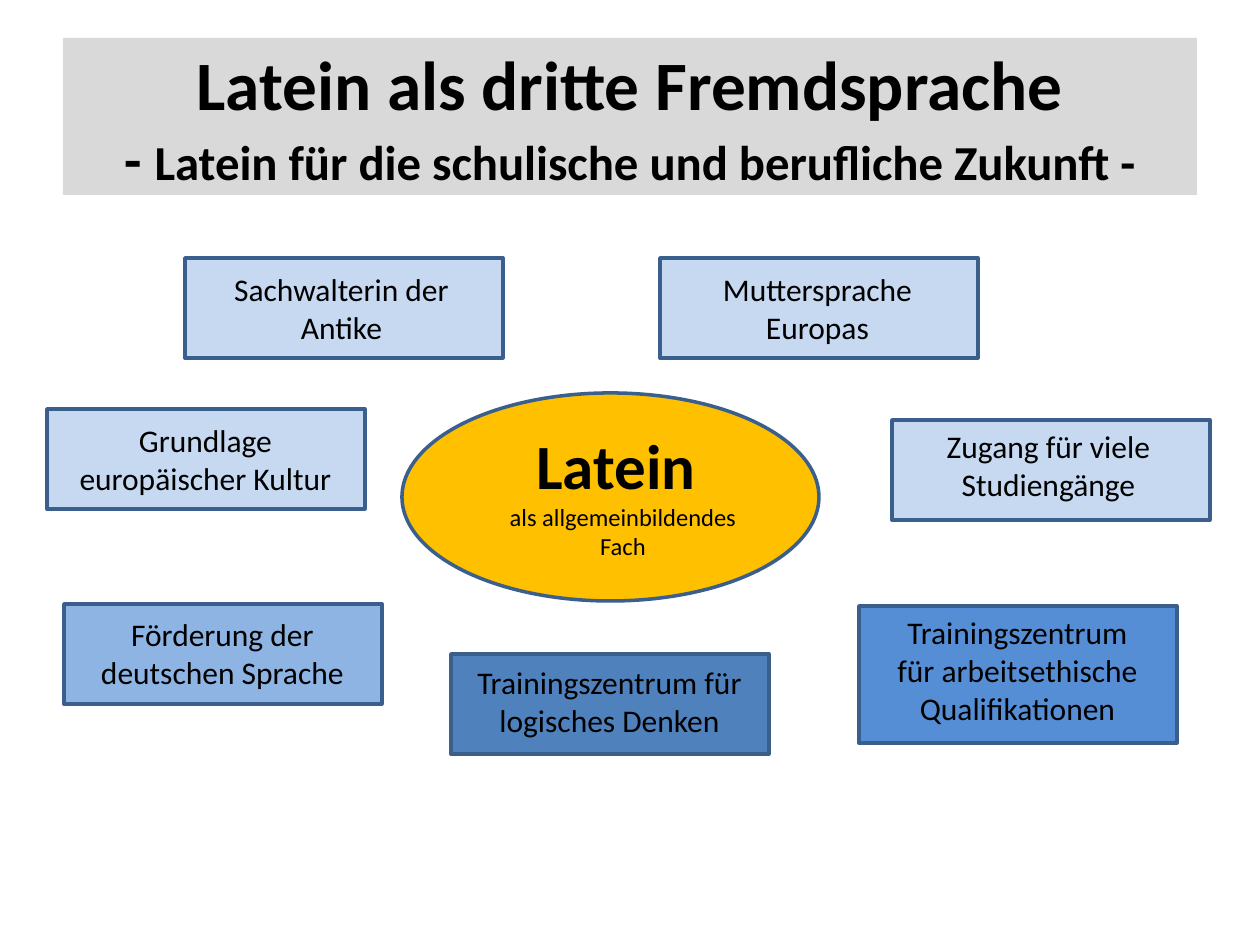
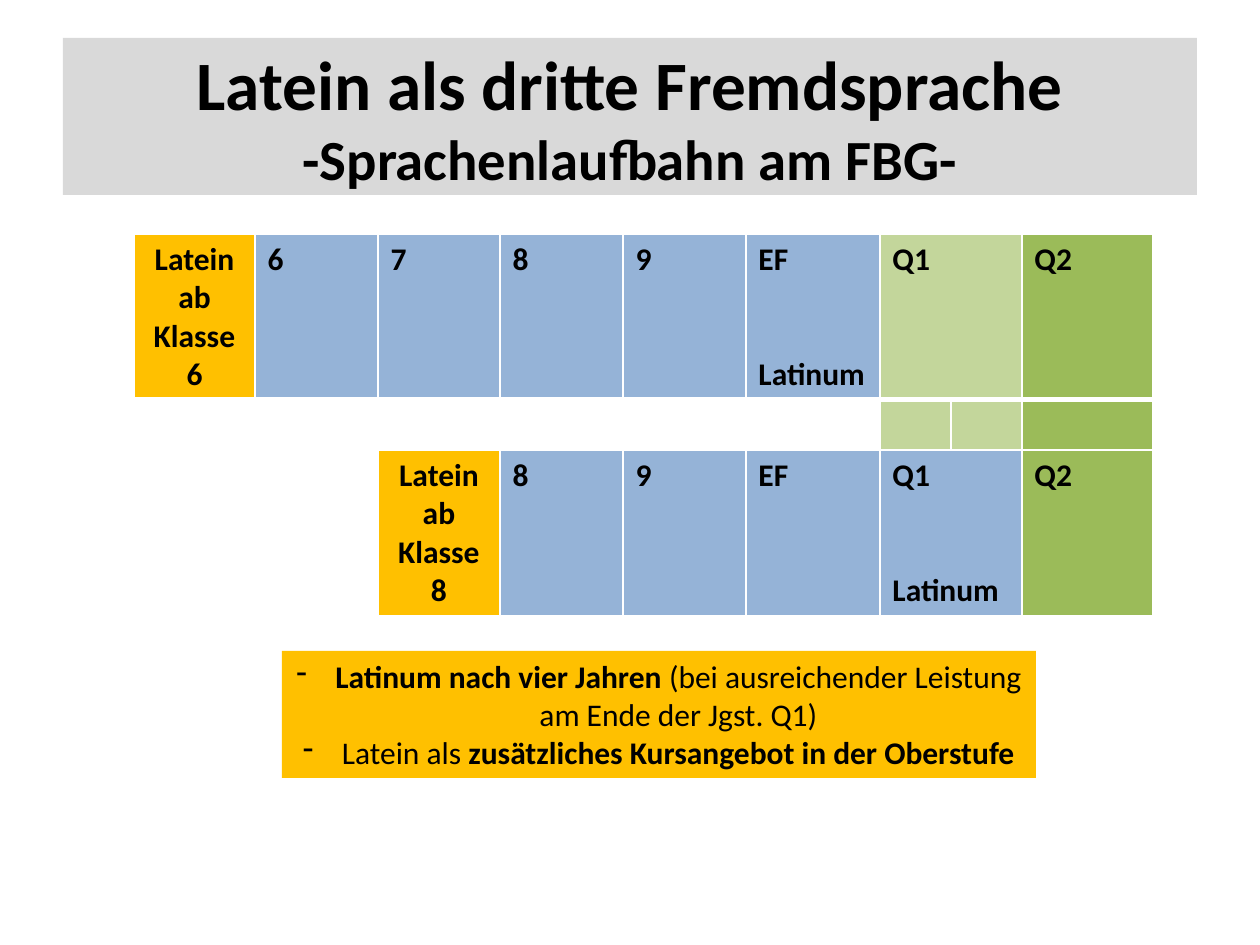
import pptx
import pptx.dml.color
import pptx.enum.shapes
import pptx.enum.text
import pptx.oxml.ns
import pptx.util
from dataclasses import dataclass
from lxml import etree

EMU_PER_PX = 914400 / 126
SHAPES = pptx.enum.shapes.MSO_SHAPE
ALIGN = pptx.enum.text.PP_ALIGN
ANCHOR = pptx.enum.text.MSO_ANCHOR


@dataclass(frozen=True)
class Theme:
    font: str = "Calibri"
    ink: str = "000000"
    white: str = "FFFFFF"
    band: str = "D9D9D9"
    gold: str = "FFC000"
    outline: str = "3A5F8C"
    culture: str = "C6D9F1"
    language: str = "8EB4E3"
    ethics: str = "558ED5"
    logic: str = "4F81BD"
    lessons: str = "95B3D7"
    optional: str = "C3D69B"
    final: str = "9BBB59"
    title: float = 39.6
    subtitle: float = 32.4
    long_subtitle: float = 27.9
    core: float = 36
    core_note: float = 14
    body: float = 18
    outline_width: float = 2
    grid_width: float = 1
    grid_break: float = 3
    latinum_gap: float = 44


THEME = Theme()


def px(length):
    return pptx.util.Emu(round(length * EMU_PER_PX))


def rgb(colour):
    return pptx.dml.color.RGBColor.from_string(colour)


def add_run(paragraph, text, size=THEME.body, bold=False):
    run = paragraph.add_run()
    run.text = text
    run.font.name = THEME.font
    run.font.size = pptx.util.Pt(size)
    run.font.bold = bold
    run.font.color.rgb = rgb(THEME.ink)


def add_block(slide, box, fill, outline=None, kind=SHAPES.RECTANGLE):
    block = slide.shapes.add_shape(kind, *map(px, box))
    block.shadow.inherit = False
    block.fill.solid()
    block.fill.fore_color.rgb = rgb(fill)
    if outline:
        block.line.color.rgb = rgb(outline)
        block.line.width = pptx.util.Pt(THEME.outline_width)
    else:
        block.line.fill.background()
    block.text_frame.word_wrap = True
    return block


def add_label(slide, box, paragraphs):
    frame = slide.shapes.add_textbox(*map(px, box)).text_frame
    frame.word_wrap = True
    for index, (text, size, bold) in enumerate(paragraphs):
        paragraph = frame.add_paragraph() if index else frame.paragraphs[0]
        paragraph.alignment = ALIGN.CENTER
        add_run(paragraph, text, size, bold)


def add_title(slide, subtitle_runs):
    band = add_block(slide, (63, 38, 1134, 157), THEME.band)
    band.text_frame.vertical_anchor = ANCHOR.MIDDLE
    heading = band.text_frame.paragraphs[0]
    heading.alignment = ALIGN.CENTER
    add_run(heading, "Latein als dritte Fremdsprache", THEME.title, True)
    heading.add_line_break()
    for text, size in subtitle_runs:
        add_run(heading, text, size, True)


def add_topic(slide, text, left, top, fill, dx, dy, height=100, label_width=277):
    add_block(slide, (left, top, 318, height), fill, THEME.outline)
    add_label(slide, (left + dx, top + dy, label_width, height - 10),
              [(text, THEME.body, False)])


def add_dash_bullet(paragraph):
    properties = paragraph._p.get_or_add_pPr()
    properties.set("marL", str(px(39)))
    properties.set("indent", str(-px(39)))
    bullet = etree.SubElement(properties, pptx.oxml.ns.qn("a:buChar"))
    bullet.set("char", "-")


def add_notice(slide, box, items):
    frame = add_block(slide, box, THEME.gold).text_frame
    frame.vertical_anchor = ANCHOR.TOP
    for index, runs in enumerate(items):
        paragraph = frame.add_paragraph() if index else frame.paragraphs[0]
        add_dash_bullet(paragraph)
        paragraph.alignment = ALIGN.CENTER
        for text, bold in runs:
            add_run(paragraph, text, bold=bold)


def set_borders(cell, top, bottom):
    properties = cell._tc.get_or_add_tcPr()
    widths = {"L": THEME.grid_width, "R": THEME.grid_width, "T": top, "B": bottom}
    for side, width in widths.items():
        line = etree.SubElement(properties, pptx.oxml.ns.qn(f"a:ln{side}"))
        line.set("w", str(pptx.util.Pt(width)))
        fill = etree.SubElement(line, pptx.oxml.ns.qn("a:solidFill"))
        etree.SubElement(fill, pptx.oxml.ns.qn("a:srgbClr")).set("val", THEME.white)


def fill_stage(cell, lines, fill):
    cell.fill.solid()
    cell.fill.fore_color.rgb = rgb(fill)
    for index, text in enumerate(lines):
        paragraph = cell.text_frame.add_paragraph() if index else cell.text_frame.paragraphs[0]
        if index:
            paragraph.space_before = pptx.util.Pt(THEME.latinum_gap)
        if fill == THEME.gold:
            paragraph.alignment = ALIGN.CENTER
        add_run(paragraph, text, bold=True)


def add_language_path(slide, left, top, widths, heights, stages):
    path_table = slide.shapes.add_table(
        len(heights), len(widths), px(left), px(top), px(sum(widths)), px(sum(heights))
    ).table
    path_table.first_row = False
    path_table.horz_banding = False
    for column, width in zip(path_table.columns, widths):
        column.width = px(width)
    for row, height in zip(path_table.rows, heights):
        row.height = px(height)
    for r, row in enumerate(stages):
        for c, stage in enumerate(row):
            cell = path_table.cell(r, c)
            set_borders(cell,
                        THEME.grid_break if r == 1 else THEME.grid_width,
                        THEME.grid_break if r == 0 else THEME.grid_width)
            if stage:
                fill_stage(cell, *stage)
            else:
                path_table.cell(r, c - 1).merge(cell)


def build_benefits(slide):
    add_title(slide, [
        ("- ", THEME.subtitle),
        ("Latein für die schulische und berufliche Zukunft -", THEME.long_subtitle),
    ])
    add_block(slide, (402, 393, 417, 208), THEME.gold, THEME.outline, SHAPES.OVAL)
    add_label(slide, (494, 420, 258, 149), [
        ("Latein ", THEME.core, True),
        ("als allgemeinbildendes Fach", THEME.core_note, False),
    ])
    add_topic(slide, "Grundlage europäischer Kultur", 47, 409, THEME.culture, 20, 6)
    add_topic(slide, "Muttersprache Europas", 660, 258, THEME.culture, 19, 6)
    add_topic(slide, "Trainingszentrum für logisches Denken", 451, 654, THEME.logic,
              10, 3, label_width=297)
    add_topic(slide, "Sachwalterin der Antike", 185, 258, THEME.culture, 18, 6)
    add_topic(slide, "Förderung der deutschen Sprache", 64, 604, THEME.language, 20, 5)
    add_topic(slide, "Trainingszentrum für arbeitsethische Qualifikationen", 859, 606,
              THEME.ethics, 20, 1, height=137)
    add_topic(slide, "Zugang für viele Studiengänge", 892, 420, THEME.culture, 18, 1)


def build_career(slide):
    add_title(slide, [("-Sprachenlaufbahn am FBG-", THEME.subtitle)])
    add_notice(slide, (282, 651, 754, 127), [
        [("Latinum nach vier Jahren ", True),
         ("(bei ausreichender Leistung am Ende der Jgst. Q1)", False)],
        [("Latein als ", False),
         ("zusätzliches Kursangebot in der Oberstufe", True)],
    ])
    blank = ([], THEME.white)
    optional = ([], THEME.optional)
    from_six = [(["Latein ab Klasse 6"], THEME.gold)]
    from_six += [([year], THEME.lessons) for year in "6789"]
    from_six += [(["EF", "Latinum"], THEME.lessons), (["Q1"], THEME.optional), None,
                 (["Q2"], THEME.final)]
    between = [blank] * 6 + [optional] * 2 + [([], THEME.final)]
    from_eight = [blank] * 2 + [(["Latein ab Klasse 8"], THEME.gold)]
    from_eight += [([year], THEME.lessons) for year in ("8", "9", "EF")]
    from_eight += [(["Q1", "Latinum"], THEME.lessons), None, (["Q2"], THEME.final)]
    add_language_path(slide, 134, 234, [121, 123, 122, 123, 123, 134, 71, 71, 131],
                      [164, 51, 164], [from_six, between, from_eight])


def main():
    deck = pptx.Presentation()
    deck.slide_width = px(1260)
    deck.slide_height = px(945)
    for build in (build_benefits, build_career):
        build(deck.slides.add_slide(deck.slide_layouts[6]))
    deck.save("out.pptx")


if __name__ == "__main__":
    main()
